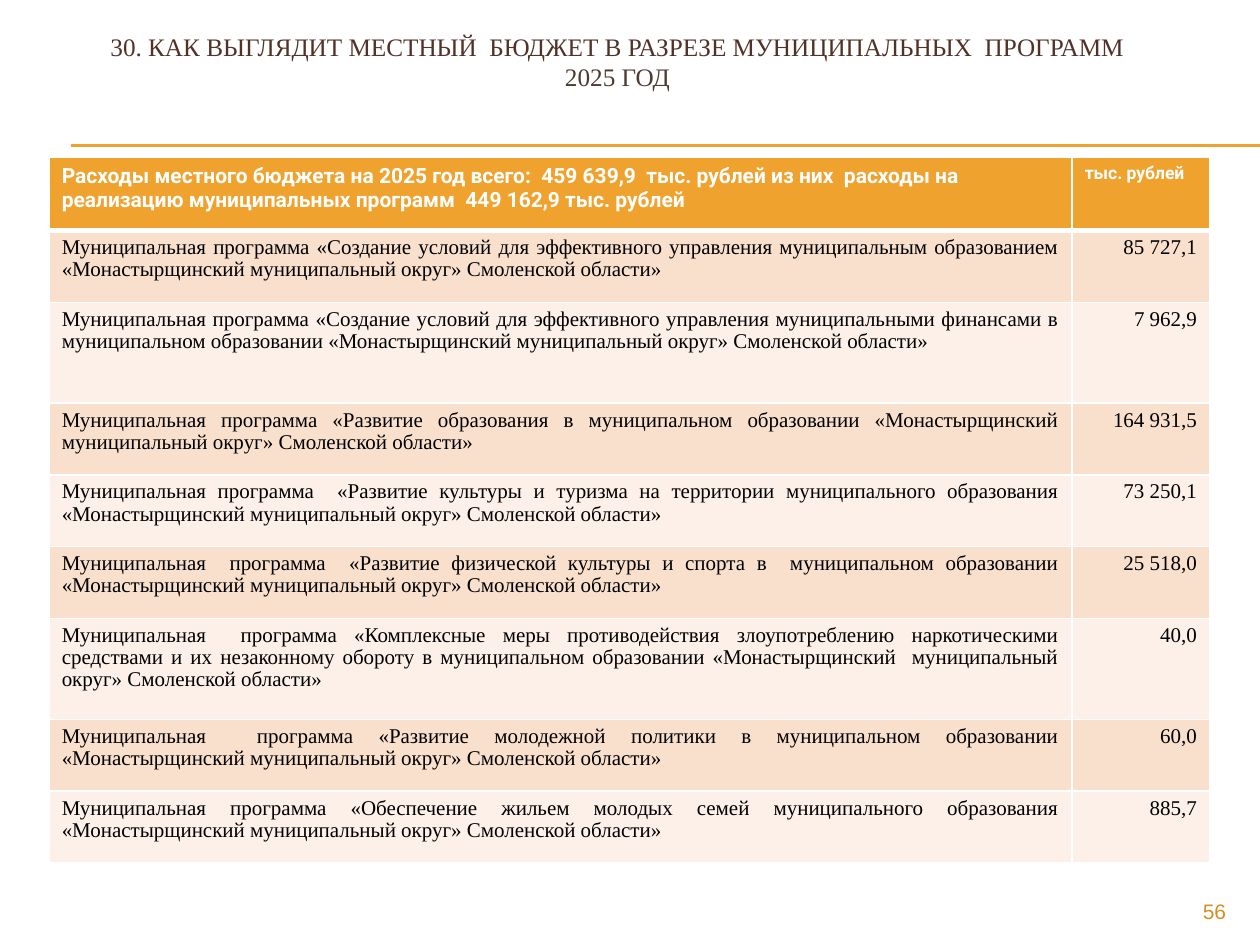
from lxml.etree import SubElement
from pptx import Presentation
from pptx.dml.color import RGBColor
from pptx.enum.shapes import MSO_CONNECTOR
from pptx.enum.text import MSO_ANCHOR, PP_ALIGN
from pptx.oxml.ns import qn
from pptx.util import Inches, Pt

COLORS = {
    "accent": "F0A22E", "title": "523227", "year": "4E3B30", "number": "D38E27",
    "odd": "F9E0CD", "even": "FCF0E8", "white": "FFFFFF", "black": "000000",
}
FORMATS = {
    "title": {"size": Pt(14.4), "name": "Times New Roman", "bold": False},
    "header": {"size": Pt(12), "name": "Roboto", "bold": True},
    "unit": {"size": Pt(10), "name": "Roboto", "bold": True},
    "body": {"size": Pt(12), "name": "Times New Roman", "bold": False},
    "number": {"size": Pt(12), "name": "Arial", "bold": False},
}
DISTRICT = "«Монастырщинский муниципальный округ» Смоленской области»"
PROGRAMS = [
    (f"Муниципальная программа «Создание условий для эффективного управления муниципальным образованием {DISTRICT}", "85 727,1"),
    (f"Муниципальная программа «Создание условий для эффективного управления муниципальными финансами в муниципальном образовании {DISTRICT}", "7 962,9"),
    (f"Муниципальная программа «Развитие образования в муниципальном образовании {DISTRICT}", "164 931,5"),
    (f"Муниципальная программа  «Развитие культуры и туризма на территории муниципального образования {DISTRICT}", "73 250,1"),
    (f"Муниципальная  программа  «Развитие физической культуры и спорта в  муниципальном образовании {DISTRICT}", "25 518,0"),
    ("Муниципальная  программа «Комплексные меры противодействия злоупотреблению наркотическими средствами и их незаконному обороту в муниципальном образовании «Монастырщинский  муниципальный округ» Смоленской области»", "40,0"),
    (f"Муниципальная  программа «Развитие молодежной политики в муниципальном образовании {DISTRICT}", "60,0"),
    (f"Муниципальная программа «Обеспечение жильем молодых семей муниципального образования {DISTRICT}", "885,7"),
]
HEADER = (
    "Расходы местного бюджета на 2025 год всего:  459 639,9  тыс. рублей из них  расходы на "
    "реализацию муниципальных программ  449 162,9 тыс. рублей",
    "тыс. рублей",
)
COLUMN_WIDTHS = [8.12, 1.09]
ROW_HEIGHTS = [0.58, 0.57, 0.8, 0.57, 0.57, 0.57, 0.8, 0.57, 0.57]


class SlideBuilder:
    """Holds the style and the current slide and adds elements to it."""

    def __init__(self, slide, colors, formats):
        self.slide = slide
        self.colors = colors
        self.formats = formats

    def color(self, name):
        return RGBColor.from_string(self.colors[name])

    def fill_paragraph(self, paragraph, text, style, color, align):
        paragraph.alignment = align
        run = paragraph.add_run()
        run.text = text
        for attribute, value in self.formats[style].items():
            setattr(run.font, attribute, value)
        run.font.color.rgb = self.color(color)

    def text(self, box, lines, style, align, anchor=MSO_ANCHOR.TOP, bottom=0.05):
        frame = self.slide.shapes.add_textbox(*map(Inches, box)).text_frame
        settings = {
            "word_wrap": True, "vertical_anchor": anchor,
            "margin_top": Inches(0.05), "margin_bottom": Inches(bottom),
        }
        for attribute, value in settings.items():
            setattr(frame, attribute, value)
        for index, (text, color) in enumerate(lines):
            paragraph = frame.add_paragraph() if index else frame.paragraphs[0]
            self.fill_paragraph(paragraph, text, style, color, align)

    def rule(self, left, right, top):
        ends = map(Inches, (left, top, right, top))
        connector = self.slide.shapes.add_connector(MSO_CONNECTOR.STRAIGHT, *ends)
        connector.line.color.rgb = self.color("accent")
        connector.line.width = Pt(0.75)
        SubElement(connector._element.spPr, qn("a:effectLst"))

    def borders(self, cell, widths):
        properties = cell._tc.get_or_add_tcPr()
        for side, width in widths.items():
            line = SubElement(properties, qn(f"a:ln{side}"), w=str(Pt(width)))
            fill = SubElement(line, qn("a:solidFill"))
            SubElement(fill, qn("a:srgbClr"), val=self.colors["white"])

    def cell(self, cell, text, style, color, align, fill, widths):
        self.borders(cell, widths)
        cell.fill.solid()
        cell.fill.fore_color.rgb = self.color(fill)
        paragraph = cell.text_frame.paragraphs[0]
        if style == "body":
            paragraph.line_spacing = 0.95
        self.fill_paragraph(paragraph, text, style, color, align)

    def table(self, left, top, column_widths, row_heights, header, rows):
        box = map(Inches, (left, top, sum(column_widths), sum(row_heights)))
        table = self.slide.shapes.add_table(len(row_heights), len(column_widths), *box).table
        for column, width in zip(table.columns, column_widths):
            column.width = Inches(width)
        for row, height in zip(table.rows, row_heights):
            row.height = Inches(height)
        for index, texts in enumerate([header, *rows]):
            widths = {"L": 1, "R": 1, "T": 3 if index == 1 else 1, "B": 1 if index else 3}
            if index:
                styles, aligns = ("body", "body"), (PP_ALIGN.JUSTIFY, PP_ALIGN.RIGHT)
                color, fill = "black", "odd" if index % 2 else "even"
            else:
                styles, aligns = ("header", "unit"), (PP_ALIGN.LEFT, PP_ALIGN.LEFT)
                color, fill = "white", "accent"
            for cell, text, style, align in zip(table.rows[index].cells, texts, styles, aligns):
                self.cell(cell, text, style, color, align, fill, widths)


def main():
    presentation = Presentation()
    presentation.slide_width = Inches(10)
    presentation.slide_height = Inches(7.5)
    slide = presentation.slides.add_slide(presentation.slide_layouts[6])
    builder = SlideBuilder(slide, COLORS, FORMATS)
    for top in (1.15, 1.16):
        builder.rule(0.56, 10, top)
    title = [
        ("30. КАК ВЫГЛЯДИТ МЕСТНЫЙ  БЮДЖЕТ В РАЗРЕЗЕ МУНИЦИПАЛЬНЫХ  ПРОГРАММ", "title"),
        ("2025 ГОД", "year"),
    ]
    builder.text((0.5, 0.35, 8.8, 0.51), title, "title", PP_ALIGN.CENTER, MSO_ANCHOR.MIDDLE, 0.28)
    builder.table(0.39, 1.25, COLUMN_WIDTHS, ROW_HEIGHTS, HEADER, PROGRAMS)
    builder.text((9, 7.08, 0.83, 0.27), [("56", "number")], "number", PP_ALIGN.RIGHT)
    presentation.save("out.pptx")


if __name__ == "__main__":
    main()
